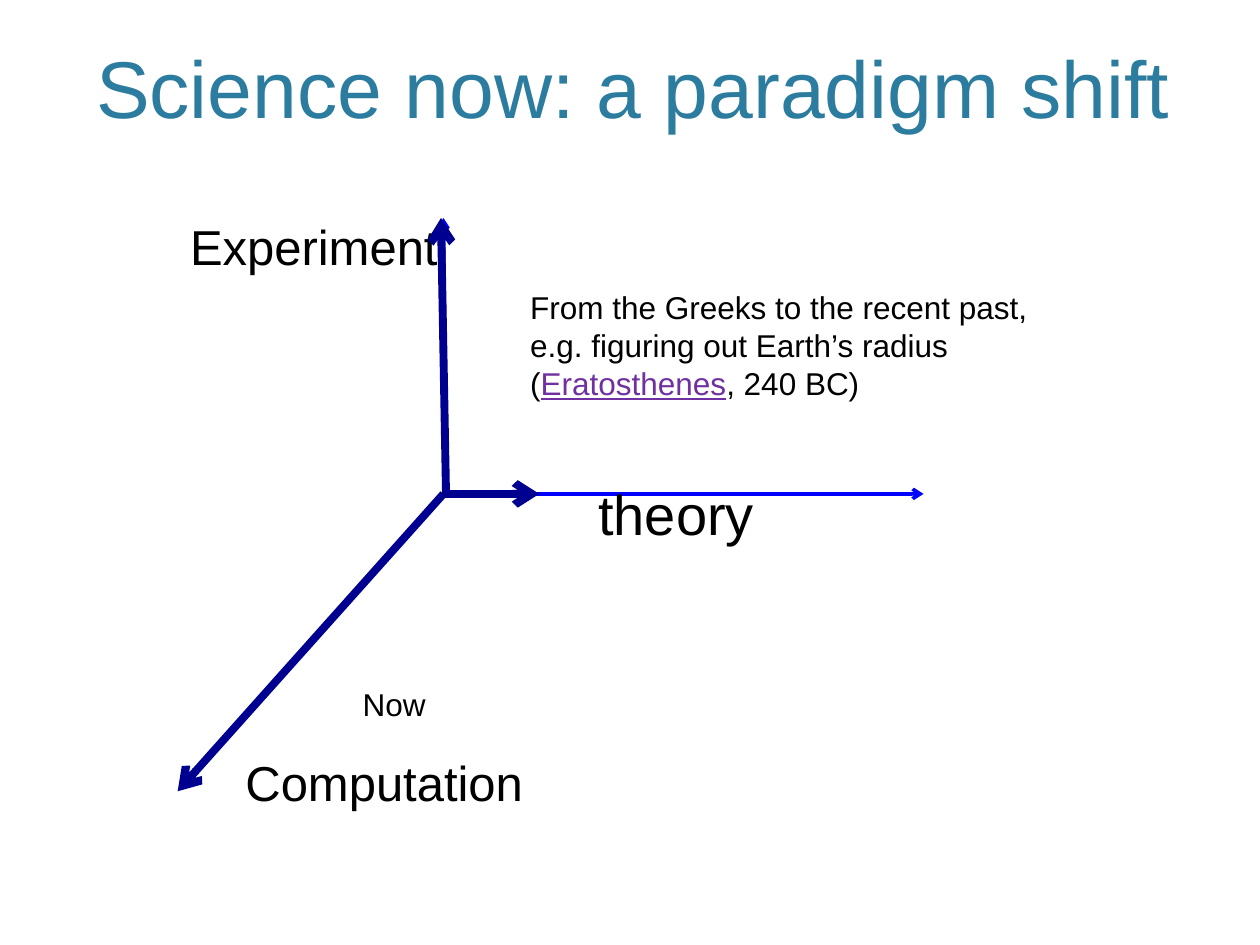
from dataclasses import dataclass

from lxml import etree
from pptx import Presentation
from pptx import util as u
from pptx.dml.color import RGBColor
from pptx.enum import shapes, text
from pptx.oxml.ns import qn


@dataclass(frozen=True)
class Theme:
    font: str = "Arial"
    title_color: str = "2C7C9F"
    ink: str = "000000"
    accent: str = "7030A0"
    past_axis: str = "0000FF"
    now_axis: str = "000090"
    title_size: float = 46
    theory_size: float = 32
    label_size: float = 28
    note_size: float = 18
    thin: float = 2
    thick: float = 4.5


class SlideBuilder:
    def __init__(self, slide, theme):
        self.slide = slide
        self.theme = theme

    def style(self, font, size, color):
        font.name = self.theme.font
        font.size = u.Pt(size)
        font.color.rgb = RGBColor.from_string(color)

    def title(self, words, left, top, width, height):
        box = self.slide.shapes.title
        box.left, box.top = u.Inches(left), u.Inches(top)
        box.width, box.height = u.Inches(width), u.Inches(height)
        frame = box.text_frame
        frame.text = words
        frame.vertical_anchor = text.MSO_ANCHOR.BOTTOM
        para = frame.paragraphs[0]
        para.alignment = text.PP_ALIGN.CENTER
        self.style(para.font, self.theme.title_size, self.theme.title_color)

    def label(self, lines, left, top, width, height, size):
        """Each line is a list of (words, accented) spans."""
        box = self.slide.shapes.add_textbox(
            u.Inches(left), u.Inches(top), u.Inches(width), u.Inches(height))
        frame = box.text_frame
        frame.word_wrap = False
        frame.auto_size = text.MSO_AUTO_SIZE.SHAPE_TO_FIT_TEXT
        for index, spans in enumerate(lines):
            para = frame.add_paragraph() if index else frame.paragraphs[0]
            self.style(para.font, size, self.theme.ink)
            for words, accented in spans:
                span = para.add_run()
                span.text = words
                self.style(span.font, size, self.theme.accent if accented else self.theme.ink)
                if accented:
                    span.font.underline = True

    def arrow(self, start, end, color, weight):
        line = self.slide.shapes.add_connector(
            shapes.MSO_CONNECTOR.STRAIGHT, *map(u.Inches, start + end))
        line.line.color.rgb = RGBColor.from_string(color)
        line.line.width = u.Pt(weight)
        etree.SubElement(line.line._get_or_add_ln(), qn("a:tailEnd"), type="arrow")
        etree.SubElement(line._element.spPr, qn("a:effectLst"))


def main():
    deck = Presentation()
    deck.slide_width, deck.slide_height = u.Inches(10), u.Inches(7.5)
    theme = Theme()
    page = SlideBuilder(deck.slides.add_slide(deck.slide_layouts[5]), theme)

    page.title("Science now: a paradigm shift", 0.25, 0.12, 9.54, 1)

    # Axes of the past: experiment and theory
    origin = (3.54, 3.92)
    for end in ((3.52, 1.73), (7.33, 3.92)):
        page.arrow(origin, end, theme.past_axis, theme.thin)
    page.label([[("theory", False)]], 4.65, 3.76, 1.45, 0.64, theme.theory_size)
    page.label([[("Experiment", False)]], 1.41, 1.67, 2.19, 0.57, theme.label_size)
    page.label(
        [[("From the Greeks to the recent past,", False)],
         [("e.g. figuring out Earth’s radius", False)],
         [("(", False), ("Eratosthenes", True), (", 240 BC)", False)]],
        4.11, 2.24, 4.44, 1.01, theme.note_size)

    # Axes of the present: computation joins the other two
    page.label([[("Computation", False)]], 1.85, 5.92, 2.43, 0.57, theme.label_size)
    page.label([[("Now", False)]], 2.78, 5.39, 0.72, 0.4, theme.note_size)
    joint = (3.52, 3.92)
    for start, end in ((joint, (1.41, 6.28)), (origin, (3.5, 1.73)), (joint, (4.28, 3.92))):
        page.arrow(start, end, theme.now_axis, theme.thick)

    deck.save("out.pptx")


if __name__ == "__main__":
    main()
